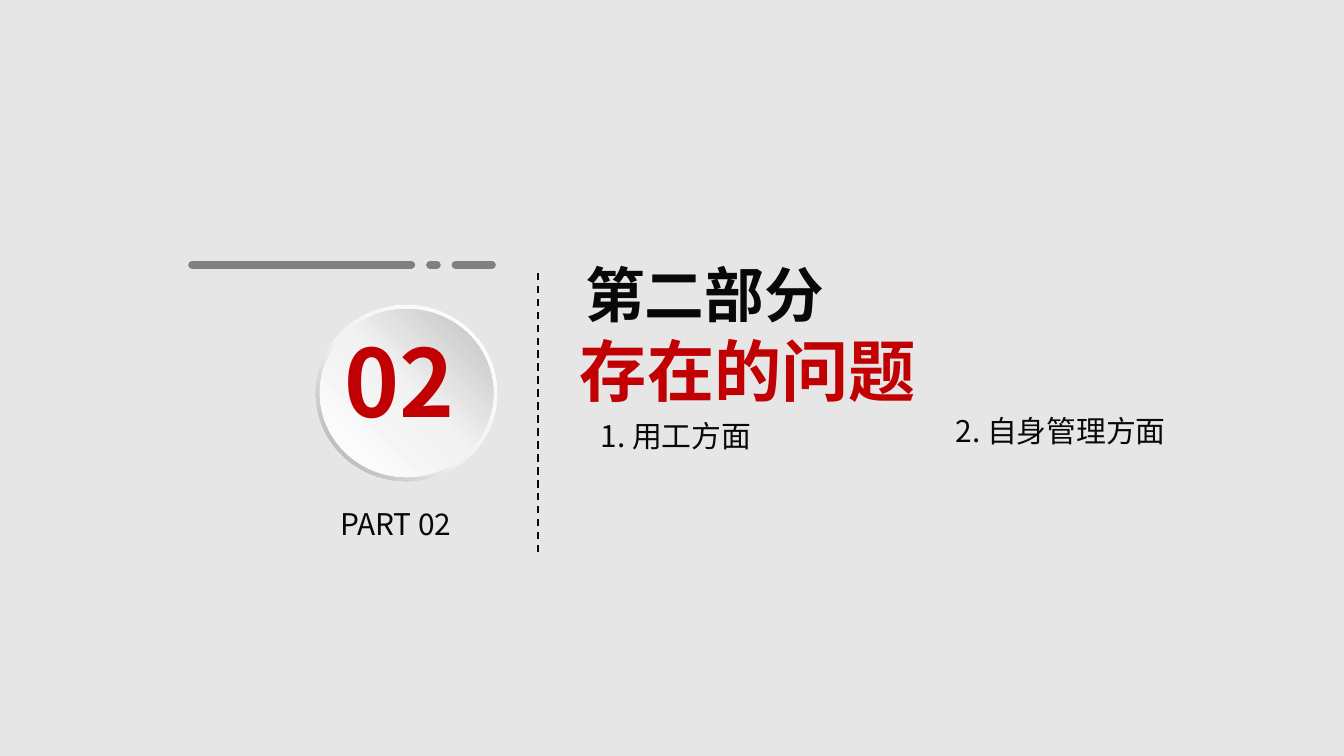
import dataclasses

import lxml.etree
import pptx
import pptx.dml.color
import pptx.enum.dml
import pptx.enum.shapes
import pptx.enum.text
import pptx.oxml
import pptx.oxml.ns
import pptx.util

Inches = pptx.util.Inches
Pt = pptx.util.Pt
RGBColor = pptx.dml.color.RGBColor
qn = pptx.oxml.ns.qn
Shape = pptx.enum.shapes.MSO_SHAPE
Align = pptx.enum.text.PP_ALIGN


@dataclasses.dataclass(frozen=True)
class Theme:
    background: str = "E7E6E6"
    ink: str = "080808"
    accent: str = "C00002"
    bar: str = "808080"
    rim: tuple = ((0, "FFFFFF"), (55, "F2F2F2"), (100, "A6A6A6"))
    face: tuple = ((0, "FFFFFF"), (51, "F2F2F2"), (100, "BFBFBF"))
    body_font: str = "Noto Sans CJK SC"
    heading_font: str = "Noto Sans CJK JP"
    indent_size: int = 14
    body_size: int = 16
    part_size: int = 32
    topic_size: int = 36
    number_size: int = 50


class SectionSlide:
    """Draws the elements of a section slide in one theme."""

    def __init__(self, deck, theme):
        self.theme = theme
        self.slide = deck.slides.add_slide(deck.slide_layouts[5])
        fill = self.slide.background.fill
        fill.solid()
        fill.fore_color.rgb = RGBColor.from_string(theme.background)

    def style(self, run, size, color, font, bold=False):
        run.font.size = Pt(size)
        run.font.bold = bold
        run.font.name = font
        run.font.color.rgb = RGBColor.from_string(color)
        east_asian = lxml.etree.Element(qn("a:ea"), typeface=font)
        run.font._element.find(qn("a:latin")).addnext(east_asian)

    def place(self, shape, left, top, width, height):
        shape.left, shape.top = Inches(left), Inches(top)
        shape.width, shape.height = Inches(width), Inches(height)

    def title(self, part, topic, *box):
        theme = self.theme
        heading = self.slide.shapes.title
        self.place(heading, *box)
        frame = heading.text_frame
        frame.word_wrap = False
        frame.auto_size = pptx.enum.text.MSO_AUTO_SIZE.SHAPE_TO_FIT_TEXT
        frame.vertical_anchor = pptx.enum.text.MSO_ANCHOR.TOP
        frame.text = " "
        part_line = frame.paragraphs[0]
        part_line.alignment = Align.LEFT
        part_line.add_run().text = part
        indent, part_run = part_line.runs
        self.style(indent, theme.indent_size, theme.ink, theme.body_font, True)
        self.style(part_run, theme.part_size, theme.ink, theme.heading_font, True)
        topic_line = frame.add_paragraph()
        topic_line.text = topic
        topic_line.alignment = Align.CENTER
        self.style(topic_line.runs[0], theme.topic_size, theme.accent,
                   theme.heading_font, True)

    def text(self, words, *box, size=None, color=None, bold=False, insets=(0, 0)):
        frame = self.slide.shapes.add_textbox(*map(Inches, box)).text_frame
        frame.word_wrap = True
        frame.margin_left = frame.margin_right = Inches(insets[0])
        frame.margin_top = frame.margin_bottom = Inches(insets[1])
        frame.text = words
        self.style(frame.paragraphs[0].runs[0], size or self.theme.body_size,
                   color or self.theme.ink, self.theme.body_font, bold)

    def gradient_shape(self, kind, stops, angle, *box):
        shape = self.slide.shapes.add_shape(kind, *map(Inches, box))
        shape.shadow.inherit = False
        shape.line.fill.background()
        shape.fill.gradient()
        gradient = shape._element.spPr.find(qn("a:gradFill"))
        stop_list = gradient.find(qn("a:gsLst"))
        stop_list.clear()
        for position, color in stops:
            stop = lxml.etree.SubElement(stop_list, qn("a:gs"), pos=str(position * 1000))
            lxml.etree.SubElement(stop, qn("a:srgbClr"), val=color)
        gradient.find(qn("a:lin")).set("ang", str(angle * 60000))
        return shape

    def line(self, start, end, color, width, dashed=False, rounded=False):
        connector = self.slide.shapes.add_connector(
            pptx.enum.shapes.MSO_CONNECTOR.STRAIGHT, *map(Inches, (*start, *end)))
        connector.line.color.rgb = RGBColor.from_string(color)
        connector.line.width = Pt(width)
        if dashed:
            connector.line.dash_style = pptx.enum.dml.MSO_LINE.DASH
        properties = connector._element.spPr
        if rounded:
            properties.find(qn("a:ln")).set("cap", "rnd")
        lxml.etree.SubElement(properties, qn("a:effectLst"))


def main():
    theme = Theme()
    deck = pptx.Presentation()
    deck.slide_width, deck.slide_height = Inches(10), Inches(10 * 9 / 16)
    section = SectionSlide(deck, theme)

    section.title("第二部分", "存在的问题", 4.21, 1.87, 2.71, 1.24)
    section.line((4, 4.11), (4, 2), theme.ink, 1, dashed=True)
    section.text("PART 02", 2.53, 3.76, 0.99, 0.29)

    rim = section.gradient_shape(Shape.DONUT, theme.rim, 135, 2.35, 2.27, 1.35, 1.31)
    rim.adjustments[0] = 0.05
    section.gradient_shape(Shape.OVAL, theme.face, 315, 2.38, 2.3, 1.29, 1.25)
    section.text("02", 2.56, 2.41, 0.99, 0.9, size=theme.number_size,
                 color=theme.accent, bold=True)

    for topic, left, top, width in (("1. 用工方面", 4.4, 3.08, 2.34),
                                    ("2. 自身管理方面", 7.04, 3.04, 1.96)):
        section.text(topic, left, top, width, 0.33, insets=(0.07, 0.03))

    for bar_start, bar_end in ((1.43, 3.06), (3.2, 3.25), (3.39, 3.66)):
        section.line((bar_start, 1.97), (bar_end, 1.97), theme.bar, 4.25, rounded=True)

    deck.save("out.pptx")


if __name__ == "__main__":
    main()
